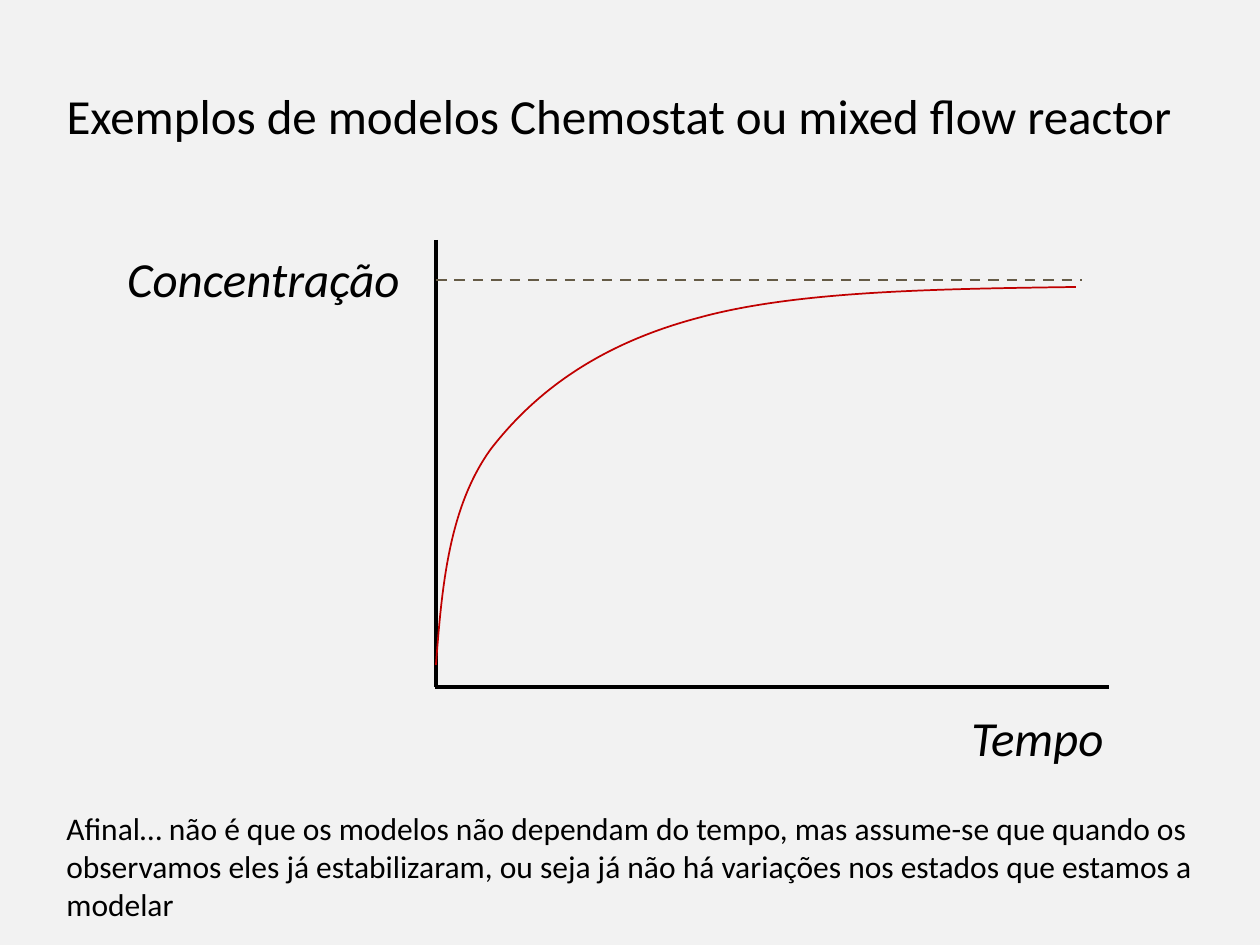
from lxml import etree
from pptx import Presentation
from pptx.dml.color import RGBColor
from pptx.enum.dml import MSO_LINE
from pptx.enum.shapes import MSO_CONNECTOR
from pptx.enum.text import MSO_ANCHOR, MSO_AUTO_SIZE, PP_ALIGN
from pptx.oxml.ns import qn
from pptx.util import Pt

LEFT, RIGHT = PP_ALIGN.LEFT, PP_ALIGN.RIGHT
TOP = MSO_ANCHOR.TOP
FIT_SHAPE = MSO_AUTO_SIZE.SHAPE_TO_FIT_TEXT
STRAIGHT = MSO_CONNECTOR.STRAIGHT
DASH = MSO_LINE.DASH

BLACK = RGBColor(0x00, 0x00, 0x00)
RED = RGBColor(0xC0, 0x00, 0x00)
OLIVE = RGBColor(0x65, 0x5B, 0x46)
PALE_GRAY = RGBColor(0xF2, 0xF2, 0xF2)
FONT = "Calibri"
EMU_PER_PX = 914400 / 126

TITLE = "Exemplos de modelos Chemostat ou mixed flow reactor"
TITLE_BOX = (54, 79, 1143, 72)
LABELS = [
    ("Concentração", (-26, 242, 438, 72), 28, True, RIGHT),
    ("Tempo", (959, 701, 234, 72), 28, True, LEFT),
    ("Afinal… não é que os modelos não dependam do tempo, mas assume-se que "
     "quando os observamos eles já estabilizaram, ou seja já não há variações "
     "nos estados que estamos a modelar", (54, 803, 1249, 127), 18, False, LEFT),
]
AXIS_X, AXIS_Y = 436, 687
AXES = [
    ((AXIS_X, 240), (AXIS_X, AXIS_Y)),
    ((AXIS_X - 1, AXIS_Y), (1109, AXIS_Y)),
]
STEADY_STATE = ((AXIS_X, 280), (1082, 280))
CURVE_START = (AXIS_X, 665)
CURVE_CONTROLS = [
    (442, 586), (449, 507), (491, 449),
    (536, 391), (600, 344), (698, 318),
    (795, 291), (935, 289), (1076, 287),
]


def px(value):
    return round(value * EMU_PER_PX)


def write(shape, text, size, italic, align, wrap):
    frame = shape.text_frame
    frame.word_wrap = wrap
    frame.auto_size = FIT_SHAPE
    frame.vertical_anchor = TOP
    paragraph = frame.paragraphs[0]
    paragraph.alignment = align
    run = paragraph.add_run()
    run.text = text
    run.font.name = FONT
    run.font.size = Pt(size)
    run.font.italic = italic
    run.font.color.rgb = BLACK


def add_line(shapes, start, end, color, width, dash=None):
    line = shapes.add_connector(STRAIGHT, *map(px, start + end))
    line.line.color.rgb = color
    line.line.width = Pt(width)
    if dash:
        line.line.dash_style = dash
    etree.SubElement(line._element.spPr, qn("a:effectLst"))


def add_curve(shapes, start, controls):
    builder = shapes.build_freeform(*start, scale=EMU_PER_PX)
    builder.add_line_segments(controls, close=False)
    curve = builder.convert_to_shape()
    outline = curve._element.find(".//" + qn("a:path"))
    segments = outline.findall(qn("a:lnTo"))
    for first in range(0, len(segments), 3):
        bezier = etree.SubElement(outline, qn("a:cubicBezTo"))
        for segment in segments[first:first + 3]:
            bezier.append(segment[0])
            outline.remove(segment)
    curve.fill.background()
    curve.line.color.rgb = RED
    curve.line.width = Pt(1)
    curve.shadow.inherit = False


def main():
    deck = Presentation()
    deck.slide_width, deck.slide_height = px(1260), px(945)
    slide = deck.slides.add_slide(deck.slide_layouts[5])
    slide.background.fill.solid()
    slide.background.fill.fore_color.rgb = PALE_GRAY
    shapes = slide.shapes

    title = shapes.title
    title.left, title.top, title.width, title.height = map(px, TITLE_BOX)
    write(title, TITLE, 28, False, LEFT, False)

    for start, end in AXES:
        add_line(shapes, start, end, BLACK, 2.25)
    for text, box, size, italic, align in LABELS:
        label = shapes.add_textbox(*map(px, box))
        write(label, text, size, italic, align, True)
    add_curve(shapes, CURVE_START, CURVE_CONTROLS)
    add_line(shapes, *STEADY_STATE, OLIVE, 1.5, DASH)

    deck.save("out.pptx")


if __name__ == "__main__":
    main()
